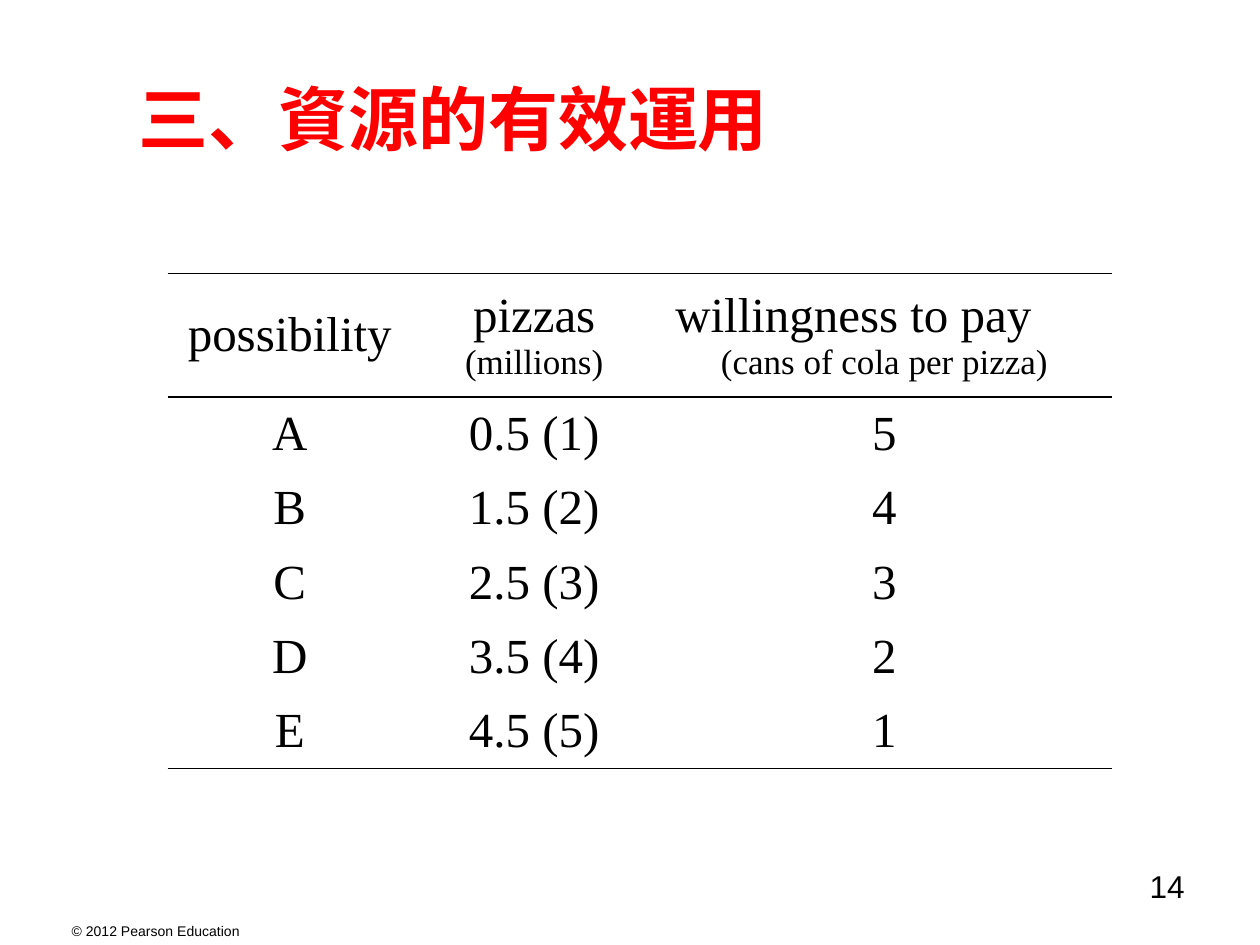
import pptx
import pptx.dml.color
import pptx.enum.text
import pptx.oxml.ns
import pptx.util
from lxml import etree

Inches = pptx.util.Inches
Pt = pptx.util.Pt
ALIGN = pptx.enum.text.PP_ALIGN
MIDDLE = pptx.enum.text.MSO_ANCHOR.MIDDLE
COLORS = {"title": "FF0000", "text": "000000", "rule": "000000"}


def style(paragraph, size, font, color, align, bold=False):
    paragraph.alignment = align
    paragraph.font.size = Pt(size)
    paragraph.font.name = font
    paragraph.font.bold = bold
    paragraph.font.color.rgb = pptx.dml.color.RGBColor.from_string(COLORS[color])


def add_border(cell, side, visible):
    qn = pptx.oxml.ns.qn
    properties = cell._tc.get_or_add_tcPr()
    line = etree.SubElement(properties, qn(f"a:ln{side}"), w=str(Pt(1)))
    if visible:
        fill = etree.SubElement(line, qn("a:solidFill"))
        etree.SubElement(fill, qn("a:srgbClr"), val=COLORS["rule"])
    else:
        etree.SubElement(line, qn("a:noFill"))


presentation = pptx.Presentation()
presentation.slide_width = Inches(10)
presentation.slide_height = Inches(7.5)
slide = presentation.slides.add_slide(presentation.slide_layouts[5])

title = slide.shapes.title
title.left, title.top, title.width, title.height = map(Inches, (1, 0.08, 9, 1.7))
title.text_frame.text = "三、資源的有效運用"
title.text_frame.vertical_anchor = MIDDLE
style(title.text_frame.paragraphs[0], 40, "Times New Roman", "title", ALIGN.LEFT, True)

rows = [
    ["possibility", "pizzas\n(millions)", "willingness to pay\n(cans of cola per pizza)"],
    ["A", "0.5 (1)", "5"],
    ["B", "1.5 (2)", "4"],
    ["C", "2.5 (3)", "3"],
    ["D", "3.5 (4)", "2"],
    ["E", "4.5 (5)", "1"],
]
table = slide.shapes.add_table(
    len(rows), 3, Inches(1.33), Inches(2.17), Inches(7.5), Inches(3.92)
).table
table.first_row = False
table.horz_banding = False
for column, width in zip(table.columns, (1.94, 1.94, 3.62)):
    column.width = Inches(width)

for row_index, values in enumerate(rows):
    table.rows[row_index].height = Inches(0.98 if row_index == 0 else 0.59)
    for column_index, value in enumerate(values):
        cell = table.cell(row_index, column_index)
        cell.text = value
        cell.vertical_anchor = MIDDLE
        add_border(cell, "L", False)
        add_border(cell, "R", False)
        add_border(cell, "T", row_index <= 1)
        add_border(cell, "B", row_index in (0, len(rows) - 1))
        cell.fill.background()
        for paragraph in cell.text_frame.paragraphs:
            size = 20 if paragraph.text.startswith("(") else 28
            style(paragraph, size, "Times New Roman", "text", ALIGN.CENTER)

willingness = table.cell(0, 2).text_frame.paragraphs[0]
willingness.alignment = ALIGN.LEFT
willingness._p.get_or_add_pPr().set("marL", str(Inches(0.05)))

labels = [
    ("© 2012 Pearson Education", 0.47, 7.27, 1.85, 0.23, 8, ALIGN.LEFT),
    ("14", 7.17, 6.83, 2.33, 0.52, 18, ALIGN.RIGHT),
]
for text, left, top, width, height, size, align in labels:
    label = slide.shapes.add_textbox(*map(Inches, (left, top, width, height)))
    label.text_frame.word_wrap = True
    label.text_frame.text = text
    style(label.text_frame.paragraphs[0], size, "Arial", "text", align)

presentation.save("out.pptx")
